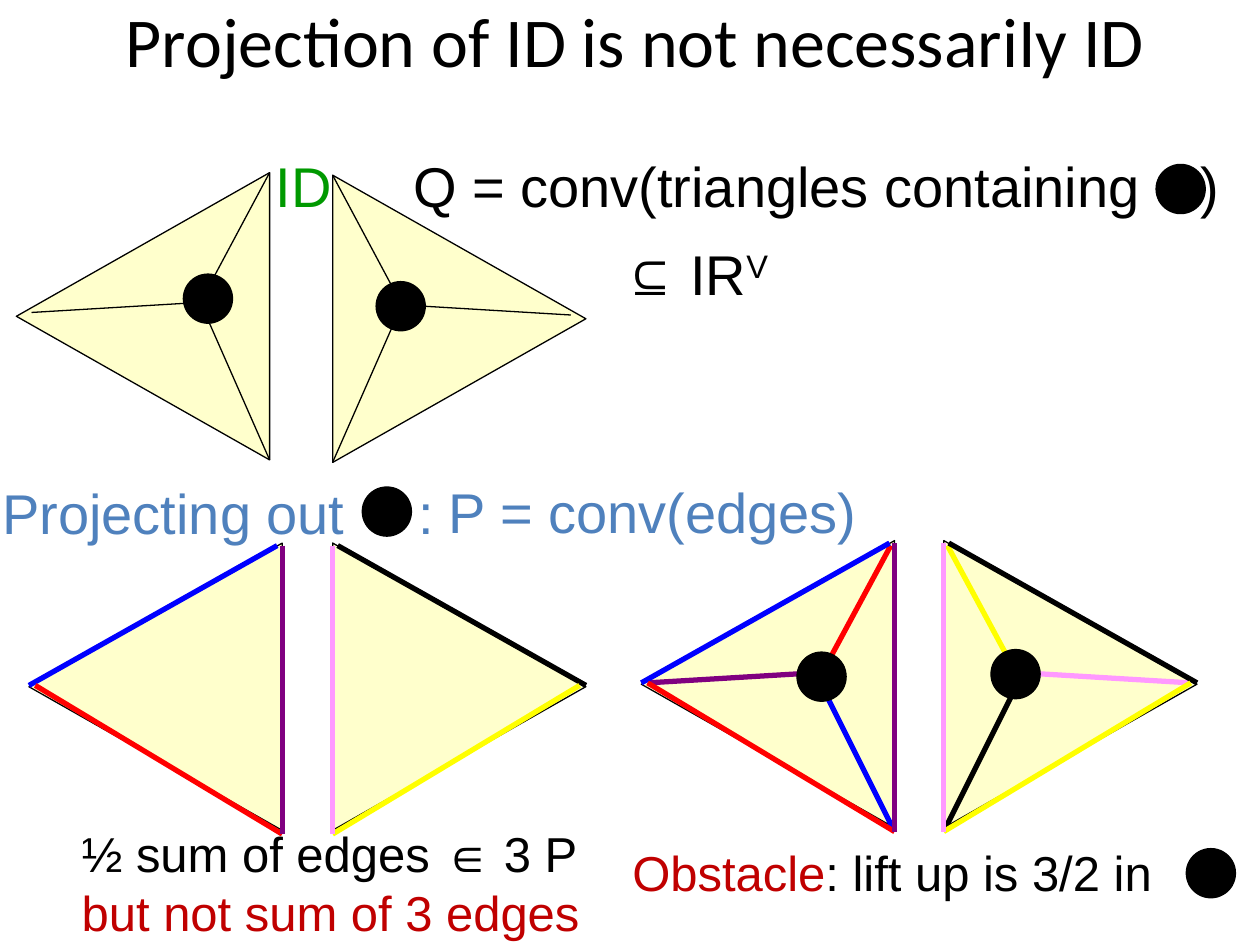
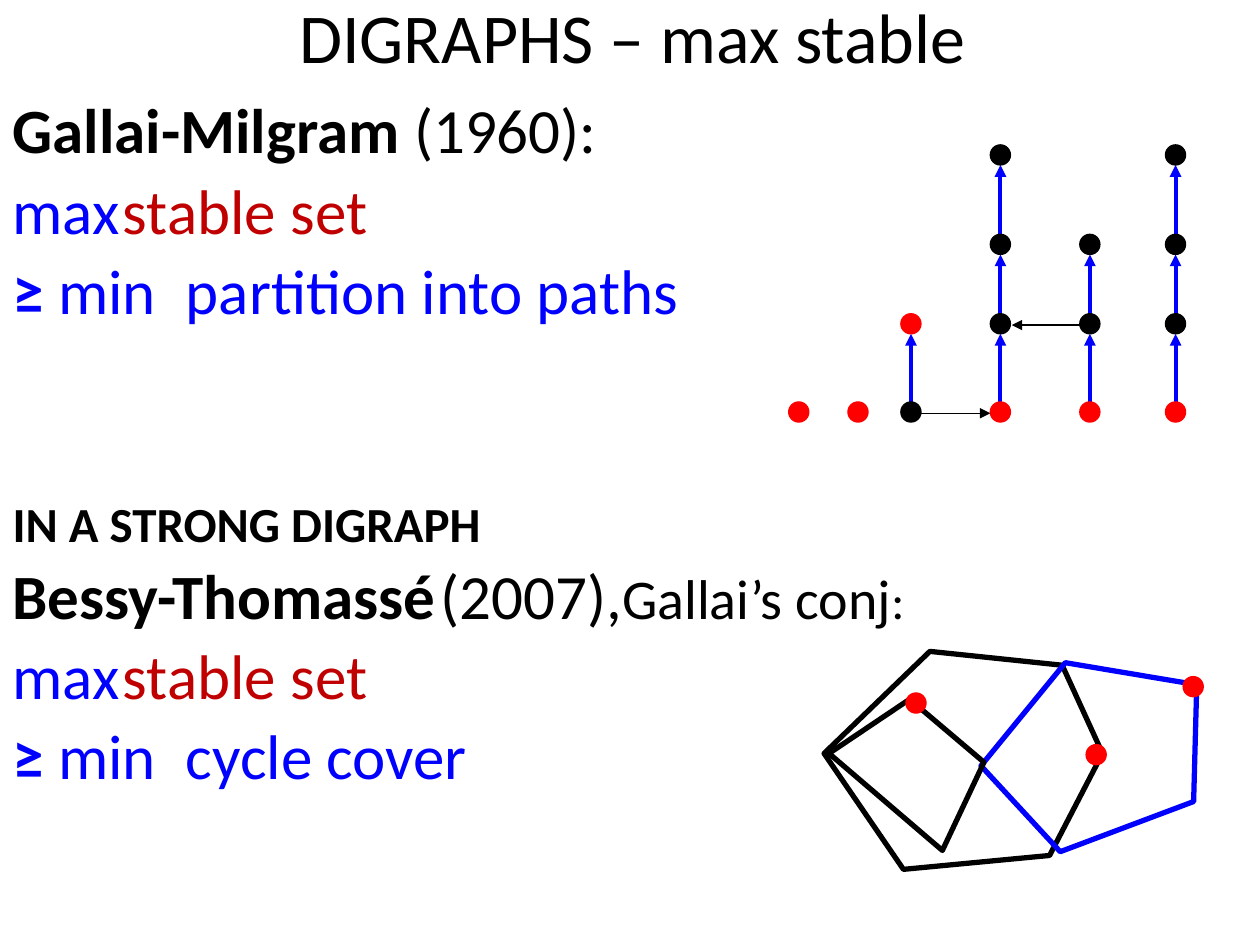
import pptx
import pptx.dml.color
import pptx.enum.shapes
import pptx.enum.text
import pptx.oxml
import pptx.oxml.ns
import pptx.util
from dataclasses import dataclass

SHAPE = pptx.enum.shapes.MSO_SHAPE
ALIGN = pptx.enum.text.PP_ALIGN
ANCHOR = pptx.enum.text.MSO_ANCHOR
CELL = pptx.util.Inches(1)  # the slide is a grid of 10 columns by 7.5 rows


@dataclass(frozen=True)
class Theme:
    black: str = "000000"
    white: str = "FFFFFF"
    cream: str = "FFFFCC"
    blue: str = "0000FF"
    red: str = "FF0000"
    purple: str = "800080"
    pink: str = "FF99FF"
    yellow: str = "FFFF00"
    green: str = "009900"
    steel: str = "4F81BD"
    crimson: str = "C00000"
    head_font: str = "Calibri"
    note_font: str = "Arial"
    title: int = 40
    body: int = 36
    formula: int = 32
    note: int = 28
    thin: float = 0.75
    arrow: float = 2.25
    thick: float = 3


T = Theme()

# Half of the graph: (steps out from the base, steps down from the top)
TRI_W, TRI_H = 2.28, 2.01
SPOKES = [((0, 0), (0.55, 1.03)), ((0.55, 1.03), (1.89, 1.11)),
          ((0.55, 1.03), (0, 2.28))]
OUTER = [((2.01, 1.13), (0.04, 0.02)), ((1.96, 1.13), (0, 2.31)),
         ((0, 0.02), (0, 2.31))]
INNER = [((0.63, 1.05), (0, 2.31)), ((0.03, 0.04), (0.58, 1.06)),
         ((0.63, 1.05), (1.96, 1.13))]
LEFT, RIGHT = -1, 1


def grid(*cells):
    return [pptx.util.Emu(round(c * CELL)) for c in cells]


def rgb(color):
    return pptx.dml.color.RGBColor.from_string(color)


def add_xml(parent, xml):
    ns = pptx.oxml.ns.nsdecls("a")
    parent.append(pptx.oxml.parse_xml(xml.replace("NS", ns, 1)))


def set_all(obj, values):
    for name, value in values.items():
        setattr(obj, name, value)


# ---- text ----
def write(p, runs, font, tab=None, **layout):
    """Fill a paragraph with (text, size, colour, extra font values) runs."""
    set_all(p, layout)
    for text, size, color, *extra in runs:
        r = p.add_run()
        r.text = text
        r.font.color.rgb = rgb(color)
        set_all(r.font, {"name": font, "size": pptx.util.Pt(size), "bold": False,
                         **(extra[0] if extra else {})})
        if "superscript" in (extra[1:] or [""])[0]:
            r._r.get_or_add_rPr().set("baseline", "30000")
    pPr = p._p.get_or_add_pPr()
    set_all(pPr, {"marL": 0, "indent": 0})
    add_xml(pPr, "<a:buNone NS/>")
    if tab:
        add_xml(pPr, f'<a:tabLst NS><a:tab pos="{grid(tab)[0]}" algn="l"/></a:tabLst>')


def place(sp, box):
    set_all(sp, dict(zip(("left", "top", "width", "height"), grid(*box))))


def new_slide(prs, layout, title, box):
    slide = prs.slides.add_slide(prs.slide_layouts[layout])
    sp = slide.shapes.title
    place(sp, box)
    set_all(sp.text_frame, {"vertical_anchor": ANCHOR.MIDDLE, "word_wrap": True})
    write(sp.text_frame.paragraphs[0], [(title, T.title, T.black)], T.head_font,
          alignment=ALIGN.CENTER)
    return slide


def label(slide, box, *lines, tab=None):
    tf = slide.shapes.add_textbox(*grid(*box)).text_frame
    tf.word_wrap = True
    for i, runs in enumerate(lines):
        p = tf.add_paragraph() if i else tf.paragraphs[0]
        write(p, runs, T.note_font, tab)


# ---- drawing ----
def paint(sp, fill, color, width):
    sp.shadow.inherit = False
    if fill:
        sp.fill.solid()
        sp.fill.fore_color.rgb = rgb(fill)
    else:
        sp.fill.background()
    sp.line.color.rgb = rgb(color)
    sp.line.width = pptx.util.Pt(width)


def preset(slide, kind, center, w, h, fill, color, width, turn=0):
    x, y = center
    sp = slide.shapes.add_shape(kind, *grid(x - w / 2, y - h / 2, w, h))
    sp.rotation = turn
    paint(sp, fill, color, width)


def dot(slide, center, size, color=T.black):
    preset(slide, SHAPE.OVAL, center, size, size, color, color, T.thin)


def line(slide, start, end, color, width, head=False):
    cn = slide.shapes.add_connector(pptx.enum.shapes.MSO_CONNECTOR.STRAIGHT,
                                    *grid(*start, *end))
    cn.line.color.rgb = rgb(color)
    cn.line.width = pptx.util.Pt(width)
    if head:
        add_xml(cn.line._get_or_add_ln(), '<a:headEnd NS type="triangle"/>')
    add_xml(cn._element.spPr, "<a:effectLst NS/>")


def polygon(slide, points, fill, color):
    first, *rest = [grid(*pt) for pt in points]
    fb = slide.shapes.build_freeform(*first, scale=1.0)
    fb.add_line_segments(rest, close=True)
    paint(fb.convert_to_shape(), fill, color, T.thick)


def half_graph(slide, base, top, side, edges, colors, width):
    """A triangle pointing to one side, with edges laid over it."""
    preset(slide, SHAPE.ISOSCELES_TRIANGLE, (base + side * TRI_H / 2, top + TRI_W / 2),
           TRI_W, TRI_H, T.cream, T.black, T.thin, turn=90 * side)
    for ends, color in zip(edges, colors):
        line(slide, *[(base + side * out, top + down) for out, down in ends],
             color, width)


# ---- slides ----
def projection_slide(prs):
    slide = new_slide(prs, 5, "Projection of ID is not necessariIy ID",
                      (0.29, -0.27, 9.5, 1.17))
    # Three pairs of triangles
    left = [T.blue, T.red, T.purple]
    right = [T.black, T.yellow, T.pink]
    for base, top, side in [(2.14, 1.37, LEFT), (2.64, 1.39, RIGHT)]:
        half_graph(slide, base, top, side, SPOKES, [T.black] * 3, T.thin)
    for base, side, colors in [(2.24, LEFT, left), (2.64, RIGHT, right)]:
        half_graph(slide, base, 4.31, side, OUTER, colors, T.thick)
    for base, side, colors in [(7.1, LEFT, left), (7.49, RIGHT, right)]:
        half_graph(slide, base, 4.29, side, INNER + OUTER, colors * 2, T.thick)

    # Formulas and remarks
    label(slide, (3.18, 1.15, 6.82, 0.64),
          [("Q = conv(triangles containing\t)", T.formula, T.black)], tab=6.25)
    label(slide, (4.84, 1.85, 5.1, 0.64),
          [("⊆\tIR", T.formula, T.black),
           ("V", T.formula, T.black, {}, "superscript")], tab=0.54)
    label(slide, (2.09, 1.15, 0.9, 0.64), [("ID", T.formula, T.green)])
    label(slide, (-0.08, 3.75, 3.9, 0.64),
          [("Projecting out\t:", T.formula, T.steel)], tab=3.3)
    label(slide, (3.46, 3.74, 4, 0.64), [("P = conv(edges)", T.formula, T.steel)])
    label(slide, (0.55, 6.49, 4.4, 1),
          [("½ sum of edges ∈\t3 P", T.note, T.black)],
          [("but not sum of 3 edges", T.note, T.crimson)], tab=3.35)
    label(slide, (4.92, 6.64, 4.49, 0.57),
          [("Obstacle", T.note, T.crimson), (": lift up is 3/2 in", T.note, T.black)])

    # Marked vertex, in the graphs and within the text
    for center in [(1.65, 2.37), (3.18, 2.43), (6.52, 5.37), (8.06, 5.35),
                   (9.61, 6.93), (9.37, 1.5), (3.07, 4.06)]:
        dot(slide, center, 0.39)


def theorem_text(slide):
    size, note = T.body, T.note
    bold = {"bold": True}
    stable = [("max\t", size, T.blue), ("stable set", size, T.crimson)]

    def at_least(what):
        return [("≥", size, T.blue, bold), (" min\t" + what, size, T.blue)]

    lines = [  # runs, space before, tab
        ([("Gallai-Milgram ", size, T.black, bold), ("(1960):", size, T.black)], 7, None),
        (stable, 7, 1.29),
        (at_least("partition into paths"), 7, 1.36),
        ([("IN A STRONG DIGRAPH", note, T.black, bold)], 98, None),
        ([("Bessy-Thomassé", size, T.black, bold), (" ", 12, T.black, bold),
          ("(2007),", size, T.black), ("Gallai’s conj", T.formula, T.black),
          (":", note, T.black)], 7, None),
        (stable, 7, 1.29),
        (at_least("cycle cover"), 7, 1.36),
    ]
    sp = slide.placeholders[1]
    place(sp, (0, 0.74, 10, 6.76))
    tf = sp.text_frame
    tf.auto_size = pptx.enum.text.MSO_AUTO_SIZE.NONE
    for i, (runs, before, tab) in enumerate(lines):
        p = tf.add_paragraph() if i else tf.paragraphs[0]
        write(p, runs, T.head_font, tab, line_spacing=0.9,
              space_before=pptx.util.Pt(before))


def path_partition(slide):
    size = 0.16
    rows = [3.27, 2.57, 1.94, 1.23]
    # column -> (vertices on the path, row of its stable vertex)
    paths = {6.34: (1, 0), 6.81: (1, 0), 7.23: (2, 1),
             7.94: (4, 0), 8.65: (3, 0), 9.33: (4, 0)}
    for x, (count, stable) in paths.items():
        for low, high in zip(rows[:count], rows[1:count]):
            line(slide, (x, high + size / 2), (x, low), T.blue, T.arrow, head=True)
    for tip, tail, y in [(7.86, 7.23, 3.28), (8.03, 8.6, 2.58)]:
        line(slide, (tip, y), (tail, y), T.black, T.thin, head=True)
    for x, (count, stable) in paths.items():
        for i, y in enumerate(rows[:count]):
            dot(slide, (x, y), size, T.red if i == stable else T.black)


def cycle_cover(slide):
    polygon(slide, [(6.54, 5.98), (7.38, 5.17), (8.43, 5.28), (8.75, 5.98),
                    (8.33, 6.79), (7.17, 6.9)], T.white, T.black)
    preset(slide, SHAPE.REGULAR_PENTAGON, (8.7, 5.91), 1.83, 1.39,
           None, T.blue, T.thick, turn=339.4)
    polygon(slide, [(7.48, 6.75), (7.81, 6.05), (7.22, 5.55), (6.58, 5.98)],
            None, T.black)
    for center in [(8.7, 5.99), (7.27, 5.58), (9.47, 5.45)]:
        dot(slide, center, 0.16, T.red)


def digraph_slide(prs):
    slide = new_slide(prs, 1, "DIGRAPHS – max stable", (-0.12, -0.35, 10.28, 1.26))
    theorem_text(slide)
    path_partition(slide)
    cycle_cover(slide)


def main():
    prs = pptx.Presentation()
    prs.slide_width, prs.slide_height = grid(10, 7.5)
    projection_slide(prs)
    digraph_slide(prs)
    prs.save("out.pptx")


if __name__ == "__main__":
    main()
